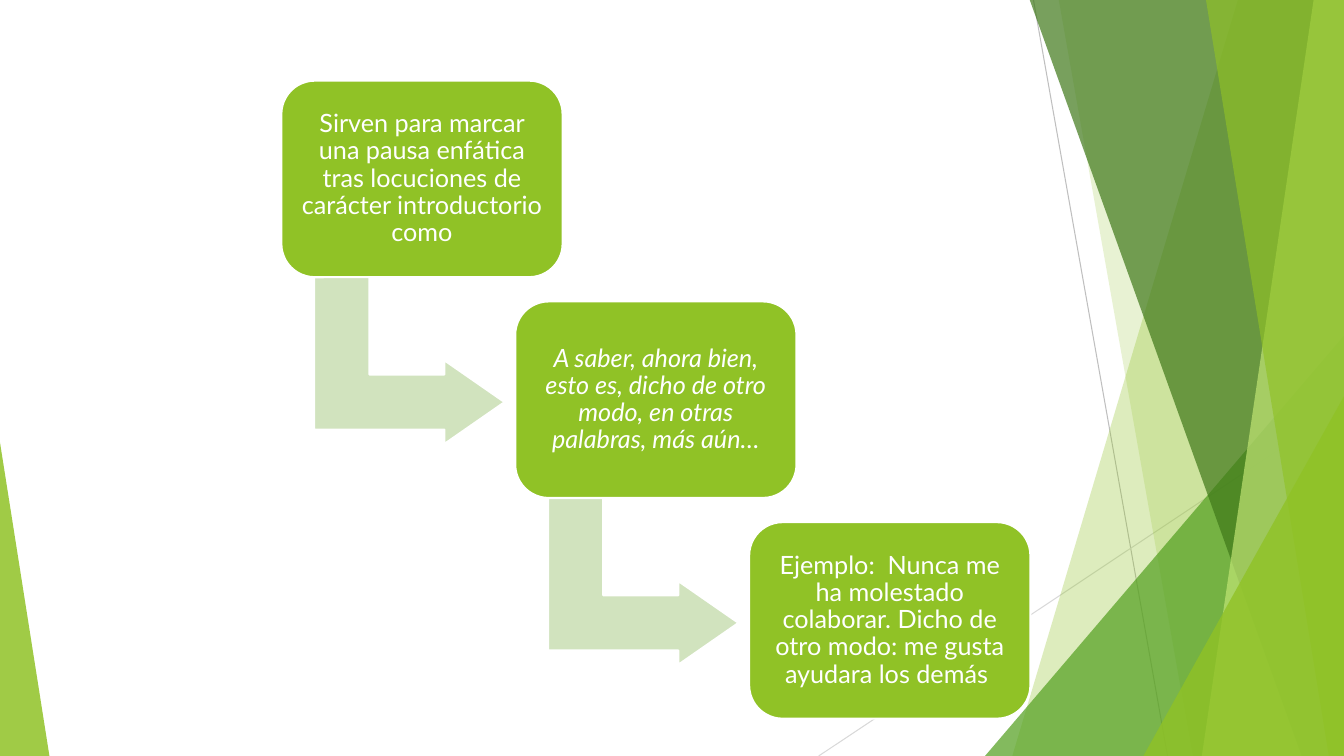
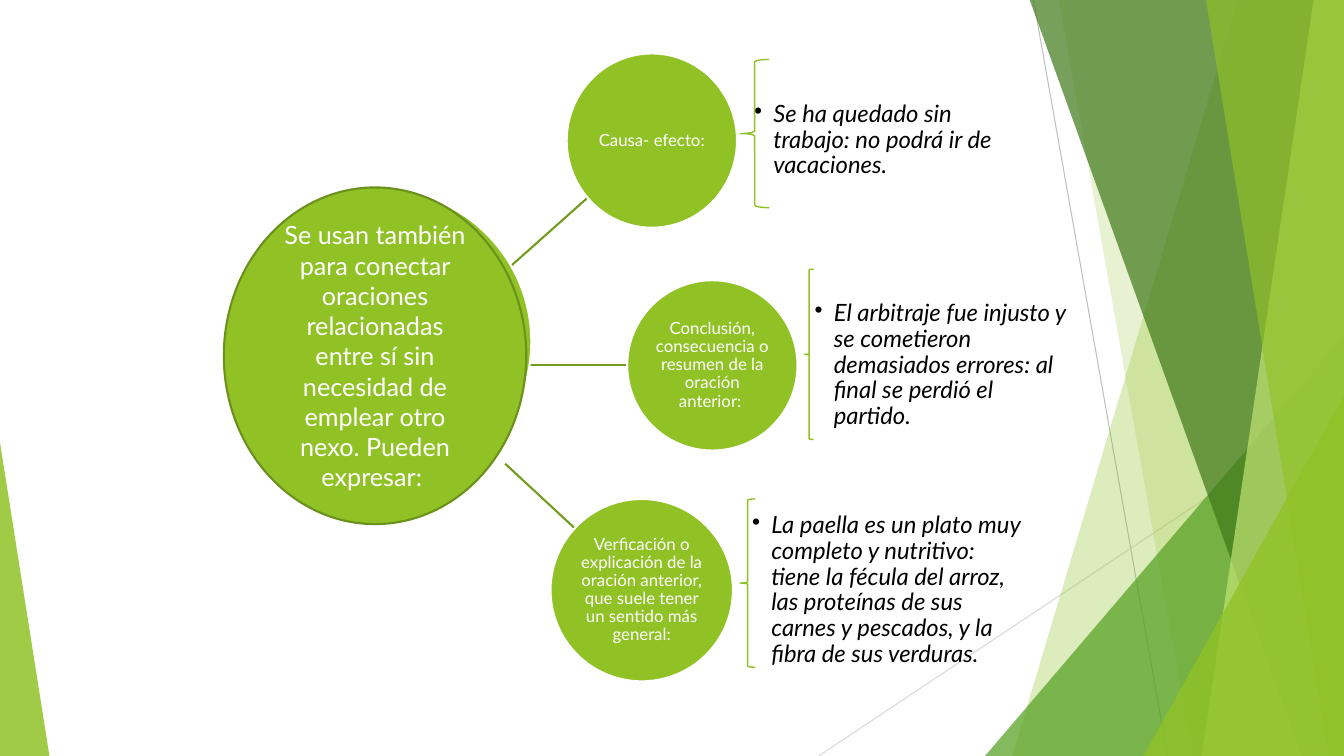
from pptx import Presentation
from pptx.dml.color import RGBColor
from pptx.enum.shapes import MSO_CONNECTOR as LINK, MSO_SHAPE as KIND
from pptx.enum.text import MSO_ANCHOR as ANCHOR, PP_ALIGN as ALIGN
from pptx.oxml.ns import qn
from pptx.util import Inches, Pt
from lxml.etree import SubElement

WIDTH, HEIGHT, TOP = 13.33, 7.5, -0.01
FONT = "Lato"
WHITE = RGBColor(0xFF, 0xFF, 0xFF)
BLACK = RGBColor(0, 0, 0)
GREEN = RGBColor(0x90, 0xC2, 0x26)
LEAF = RGBColor(0x54, 0xA0, 0x21)
FOREST = RGBColor(0x3F, 0x78, 0x19)
LIME = RGBColor(0xC0, 0xE4, 0x74)
PALE = RGBColor(0xD1, 0xE3, 0xBE)
OLIVE = RGBColor(0x73, 0x9B, 0x1E)
RIM = RGBColor(0x6B, 0x90, 0x1C)
GRAY = RGBColor(0xBF, 0xBF, 0xBF)
LIGHT_GRAY = RGBColor(0xD9, 0xD9, 0xD9)

STEPS = [
    ("Sirven para marcar una pausa enfática tras locuciones de carácter "
     "introductorio como", False),
    ("A saber, ahora bien, esto es, dicho de otro modo, en otras palabras, "
     "más aún…", True),
    ("Ejemplo:  Nunca me ha molestado colaborar. Dicho de otro modo: "
     "me gusta ayudara los demás ", False),
]
HUB = ("Se usan también para conectar oraciones relacionadas entre sí sin "
       "necesidad de emplear otro nexo. Pueden expresar: ")
SPOKES = [((5.01, 4.6), (5.7, 5.24)), ((5.01, 3.62), (6.22, 3.62)),
          ((5.01, 2.69), (5.83, 1.96))]
USES = [
    ((5.62, 0.53, 1.69, 1.73), "Causa- efecto:",
     (7.48, 0.53, 2.54, 1.73),
     "Se ha quedado sin trabajo: no podrá ir de vacaciones."),
    ((6.22, 2.78, 1.69, 1.69),
     "Conclusión, consecuencia o resumen de la oración anterior: ",
     (8.08, 2.78, 2.54, 1.69),
     "El arbitraje fue injusto y se cometieron demasiados errores: "
     "al final se perdió el partido."),
    ((5.46, 4.95, 1.81, 1.81),
     "Verficación o explicación de la oración anterior, que suele tener "
     "un sentido más general:",
     (7.46, 4.95, 2.72, 1.81),
     "La paella es un plato muy completo y nutritivo: tiene la fécula del "
     "arroz, las proteínas de sus carnes y pescados, y la fibra de sus "
     "verduras."),
]
BRACES = [(7.34, 0.59, 0.29, 1.47), (7.98, 2.67, 0.09, 1.69),
          (7.34, 4.95, 0.15, 1.67)]


def apply(target, formats):
    for name, value in formats.items():
        setattr(target, name, value)


def paint(shape, fill=None, line=None, weight=1.5, alpha=None):
    shape.shadow.inherit = False
    if fill is None:
        shape.fill.background()
    else:
        shape.fill.solid()
        shape.fill.fore_color.rgb = fill
    if alpha is not None:
        color = shape.element.spPr.find(qn("a:solidFill"))[0]
        SubElement(color, qn("a:alpha"), val=str(alpha * 1000))
    if line is None:
        shape.line.fill.background()
    else:
        shape.line.color.rgb = line
        shape.line.width = Pt(weight)


def add_preset(page, kind, place, adjust=(), **look):
    shape = page.shapes.add_shape(kind, *map(Inches, place))
    for index, value in enumerate(adjust):
        shape.adjustments[index] = value
    paint(shape, **look)
    return shape


def add_line(page, start, end, color, weight):
    line = page.shapes.add_connector(LINK.STRAIGHT, *map(Inches, start + end))
    line.line.color.rgb = color
    line.line.width = Pt(weight)
    SubElement(line.element.spPr, qn("a:effectLst"))


def add_band(page, top_x, bottom_x, color, alpha):
    builder = page.shapes.build_freeform(Inches(top_x), Inches(TOP))
    corners = [(WIDTH, TOP), (WIDTH, HEIGHT), (bottom_x, HEIGHT)]
    builder.add_line_segments([tuple(map(Inches, c)) for c in corners])
    paint(builder.convert_to_shape(), fill=color, alpha=alpha)


def add_triangle(page, place, apex, color, alpha):
    add_preset(page, KIND.ISOSCELES_TRIANGLE, place, [apex],
               fill=color, alpha=alpha)


def write(shape, text, size, inset=(0, 0), color=WHITE, italic=False,
          align=ALIGN.CENTER, spacing=0.9):
    side, edge = map(Inches, inset)
    apply(shape.text_frame, {
        "word_wrap": True, "vertical_anchor": ANCHOR.MIDDLE,
        "margin_left": side, "margin_right": side,
        "margin_top": edge, "margin_bottom": edge})
    para = shape.text_frame.paragraphs[0]
    apply(para, {"alignment": align, "line_spacing": spacing})
    span = para.add_run()
    span.text = text
    apply(span.font, {"name": FONT, "size": Pt(size), "italic": italic})
    span.font.color.rgb = color
    return para


def add_bullet(page, place, text):
    box = page.shapes.add_textbox(*map(Inches, place))
    para = write(box, text, 17, color=BLACK, italic=True, align=ALIGN.LEFT)
    props = para._p.get_or_add_pPr()
    indent = Inches(0.19)
    props.set("marL", str(indent))
    props.set("indent", str(-indent))
    SubElement(props, qn("a:buChar"), char="•")


def decorate(page, layout):
    add_line(page, (10.25, 0), (11.58, HEIGHT), GRAY, 0.75)
    add_line(page, (WIDTH, 4.03), (8.12, HEIGHT), LIGHT_GRAY, 0.75)
    add_band(page, 12.28, 10.04, GREEN, 30)
    add_band(page, 10.5, 11.83, GREEN, 20)
    add_triangle(page, (9.77, 3.33, 3.56, 4.17), 1, LEAF, 72)
    add_band(page, 10.21, 12.91, FOREST, 70)
    add_band(page, 13.03, 11.92, LIME, 70)
    add_band(page, 11.96, 13.18, GREEN, 65)
    add_triangle(page, (11.34, 3.93, 1.99, 3.57), 1, GREEN, 80)
    add_triangle(page, (0, 4.39, 0.49, 3.11), 0, GREEN, 85)
    for shape in list(page.shapes):
        layout.element.cSld.spTree.append(shape.element)


def build_steps(page):
    for index, (text, italic) in enumerate(STEPS):
        right, down = 2.32 * index, 2.19 * index
        if index < len(STEPS) - 1:
            arrow = add_preset(page, KIND.BENT_UP_ARROW,
                               (3.23 + right, 2.63 + down, 1.66, 1.89),
                               [0.33, 0.25, 0.36], fill=PALE, line=WHITE)
            arrow.rotation = 90
        box = add_preset(page, KIND.ROUNDED_RECTANGLE,
                         (2.79 + right, 0.8 + down, 2.79, 1.95), [0.17],
                         fill=GREEN, line=WHITE)
        write(box, text, 18, (0.07, 0.07), italic=italic)


def build_uses(page):
    for start, end in SPOKES:
        add_line(page, start, end, OLIVE, 1.5)
    add_preset(page, KIND.OVAL, (2.25, 1.88, 3.02, 3.02),
               fill=GREEN, line=WHITE)
    for circle_place, label, example_place, example in USES:
        circle = add_preset(page, KIND.OVAL, circle_place,
                            fill=GREEN, line=WHITE)
        write(circle, label, 12, (0.01, 0.01))
        add_bullet(page, example_place, example)
    hub = add_preset(page, KIND.OVAL, (2.22, 1.86, 3, 3.34),
                     fill=GREEN, line=RIM)
    write(hub, HUB, 18, (0.1, 0.05), spacing=1.0)
    for place in BRACES:
        add_preset(page, KIND.LEFT_BRACE, place, line=GREEN, weight=1)


def main():
    deck = Presentation()
    deck.slide_width, deck.slide_height = Inches(WIDTH), Inches(HEIGHT)
    layout = deck.slide_layouts[6]
    pages = [deck.slides.add_slide(layout) for _ in range(2)]
    decorate(pages[0], layout)
    build_steps(pages[0])
    build_uses(pages[1])
    deck.save("out.pptx")


if __name__ == "__main__":
    main()
